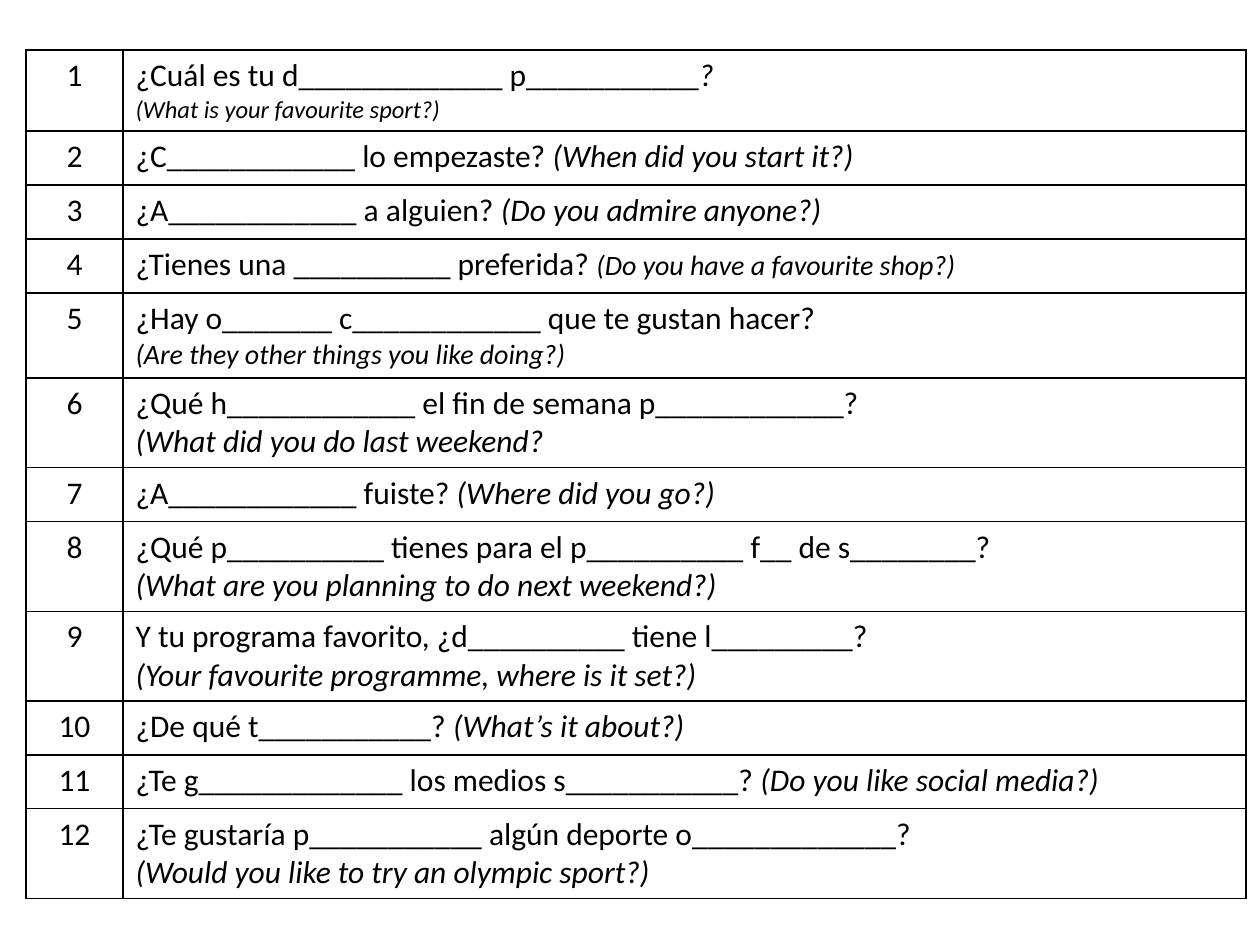
from lxml.etree import SubElement
from pptx import Presentation
from pptx.dml.color import RGBColor
from pptx.enum.text import MSO_ANCHOR, PP_ALIGN
from pptx.oxml.ns import qn
from pptx.util import Pt

PX = 914400 // 126
COLORS = {"ink": "000000", "border": "000000"}
NUMBER_WIDTH, QUESTION_WIDTH = 97, 1123
ONE_LINE, TWO_LINES = 54, 89
QUESTIONS = [
    ("¿Cuál es tu d_____________ p___________", "?\n", "(What is your favourite sport?)", 14, 81),
    ("¿C____________ lo empezaste? ", "", "(When did you start it?)", 18, ONE_LINE),
    ("¿A____________ a alguien? ", "", "(Do you admire anyone?)", 18, ONE_LINE),
    ("¿Tienes una __________ preferida? ", "", "(Do you have a favourite shop?)", 16, ONE_LINE),
    ("¿Hay o_______ c____________ que te gustan hacer? \n", "",
     "(Are they other things you like doing?)", 16, 85),
    ("¿Qué h____________ el fin de semana p____________? \n", "",
     "(What did you do last weekend?", 18, TWO_LINES),
    ("¿A____________ fuiste? ", "", "(Where did you go?)", 18, ONE_LINE),
    ("¿Qué p__________ tienes para el p__________ f__ de s________? \n", "",
     "(What are you planning to do next weekend?)", 18, TWO_LINES),
    ("Y tu programa favorito, ¿d__________ tiene l_________? \n", "",
     "(Your favourite programme, where is it set?)", 18, TWO_LINES),
    ("¿De qué t___________? ", "", "(What’s it about?)", 18, ONE_LINE),
    ("¿Te g_____________ los medios s___________? ", "", "(Do you like social media?)", 18, ONE_LINE),
    ("¿Te gustaría p___________ algún deporte o_____________? \n", "",
     "(Would you like to try an olympic sport?)", 18, TWO_LINES),
]


class Worksheet:
    """Builds a question table on one slide in a single style."""

    def __init__(self, slide):
        self.slide = slide
        self.font = {"name": "Calibri", "bold": False}

    def add_text(self, paragraph, text, size=18, italic=False):
        line, line_break, _ = text.partition("\n")
        run = paragraph.add_run()
        run.text = line
        for name, value in {**self.font, "size": Pt(size), "italic": italic}.items():
            setattr(run.font, name, value)
        run.font.color.rgb = RGBColor.from_string(COLORS["ink"])
        if line_break:
            paragraph.add_line_break()

    def style_cell(self, cell):
        cell.vertical_anchor = MSO_ANCHOR.TOP
        properties = cell._tc.get_or_add_tcPr()
        for side in ("a:lnL", "a:lnR", "a:lnT", "a:lnB"):
            border = SubElement(properties, qn(side), w=str(Pt(1)))
            fill = SubElement(border, qn("a:solidFill"))
            SubElement(fill, qn("a:srgbClr"), val=COLORS["border"])
        cell.fill.background()

    def question_table(self, left, top, questions):
        heights = [question[-1] for question in questions]
        widths = (NUMBER_WIDTH, QUESTION_WIDTH)
        table = self.slide.shapes.add_table(
            len(questions), 2, left * PX, top * PX, sum(widths) * PX, sum(heights) * PX).table
        table.first_row = table.horz_banding = False
        for column, width in zip(table.columns, widths):
            column.width = width * PX
        for number, (row, question) in enumerate(zip(table.rows, questions), 1):
            prompt, ending, translation, size, height = question
            row.height = height * PX
            for cell in row.cells:
                self.style_cell(cell)
            number_paragraph, paragraph = (cell.text_frame.paragraphs[0] for cell in row.cells)
            number_paragraph.alignment = PP_ALIGN.CENTER
            self.add_text(number_paragraph, str(number))
            self.add_text(paragraph, prompt)
            if ending:
                self.add_text(paragraph, ending, italic=True)
            self.add_text(paragraph, translation, size, italic=True)


def main():
    presentation = Presentation()
    presentation.slide_width, presentation.slide_height = 1260 * PX, 945 * PX
    slide = presentation.slides.add_slide(presentation.slide_layouts[6])
    Worksheet(slide).question_table(26, 50, QUESTIONS)
    presentation.save("out.pptx")


if __name__ == "__main__":
    main()
